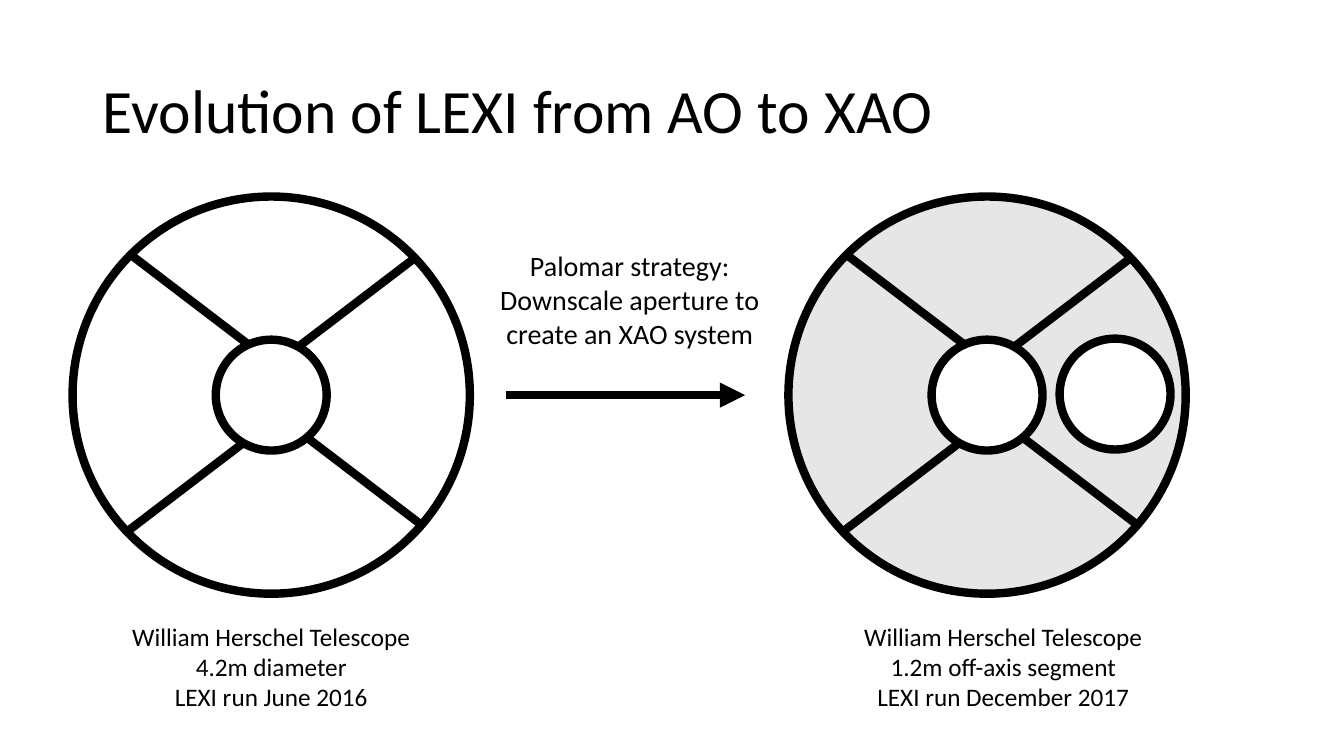
from lxml import etree
from pptx import Presentation
from pptx.dml.color import RGBColor
from pptx.enum.shapes import MSO_CONNECTOR, MSO_SHAPE
from pptx.enum.text import MSO_ANCHOR, PP_ALIGN
from pptx.oxml.ns import qn
from pptx.util import Inches, Pt

STRAIGHT = MSO_CONNECTOR.STRAIGHT
OVAL = MSO_SHAPE.OVAL
TOP, MIDDLE = MSO_ANCHOR.TOP, MSO_ANCHOR.MIDDLE
LEFT, CENTER = PP_ALIGN.LEFT, PP_ALIGN.CENTER

BLACK = RGBColor(0x00, 0x00, 0x00)
WHITE = RGBColor(0xFF, 0xFF, 0xFF)
GREY = RGBColor(0xE7, 0xE6, 0xE6)
FONT = "Calibri"
STROKE = Pt(6)

TITLE = "Evolution of LEXI from AO to XAO"
STRATEGY = ["Palomar strategy:", "Downscale aperture to create an XAO system"]

# Pupil centre x, mirror colour, caption left, caption lines
TELESCOPES = [
    (2.69, WHITE, 1.08,
     ["William Herschel Telescope", "4.2m diameter", "LEXI run June 2016"]),
    (9.79, GREY, 8.34,
     ["William Herschel Telescope", "1.2m off-axis segment", "LEXI run December 2017"]),
]

PUPIL_Y = 3.92
MIRROR_DIAMETER = 3.94
SMALL_DIAMETER = 1.1
SEGMENT_CENTER = (11.06, 3.91)
# Spider vanes as (outer, inner) offsets from the pupil centre
VANES = [
    ((-1.39, -1.39), (-0.21, -0.49)),
    ((1.45, -1.38), (0.27, -0.48)),
    ((-1.45, 1.37), (-0.27, 0.47)),
    ((1.52, 1.31), (0.34, 0.41)),
]
ARROW_START, ARROW_END = (5.02, PUPIL_Y), (7.39, PUPIL_Y)


def add_text(slide, box, lines, size, align=CENTER, anchor=TOP, spacing=1.0):
    frame = slide.shapes.add_textbox(*map(Inches, box)).text_frame
    frame.word_wrap = True
    frame.vertical_anchor = anchor
    frame.text = "\n".join(lines)
    for paragraph in frame.paragraphs:
        paragraph.alignment = align
        paragraph.line_spacing = spacing
        for run in paragraph.runs:
            run.font.name = FONT
            run.font.size = Pt(size)
            run.font.color.rgb = BLACK


def add_circle(shapes, center, diameter, color):
    x, y = center
    circle = shapes.add_shape(OVAL, Inches(x - diameter / 2), Inches(y - diameter / 2),
                              Inches(diameter), Inches(diameter))
    circle.shadow.inherit = False
    circle.fill.solid()
    circle.fill.fore_color.rgb = color
    circle.line.color.rgb = BLACK
    circle.line.width = STROKE


def add_line(shapes, start, end):
    line = shapes.add_connector(STRAIGHT, *map(Inches, start + end))
    line.line.color.rgb = BLACK
    line.line.width = STROKE
    etree.SubElement(line._element.spPr, qn("a:effectLst"))
    return line


def add_pupil(slide, center_x, color):
    """Group the mirror, its central obscuration and the spider vanes."""
    shapes = slide.shapes.add_group_shape().shapes
    center = (center_x, PUPIL_Y)
    add_circle(shapes, center, MIRROR_DIAMETER, color)
    add_circle(shapes, center, SMALL_DIAMETER, WHITE)
    for vane in VANES:
        outer, inner = [(center_x + dx, PUPIL_Y + dy) for dx, dy in vane]
        add_line(shapes, outer, inner)


def main():
    prs = Presentation()
    prs.slide_width, prs.slide_height = Inches(13.33), Inches(7.5)
    slide = prs.slides.add_slide(prs.slide_layouts[6])

    add_text(slide, (0.92, 0.4, 11.5, 1.45), [TITLE], 44, LEFT, MIDDLE, 0.9)
    for center_x, color, caption_left, caption in TELESCOPES:
        add_pupil(slide, center_x, color)
        add_text(slide, (caption_left, 6.11, 3.22, 1.01), caption, 18)

    arrow = add_line(slide.shapes, ARROW_START, ARROW_END)
    etree.SubElement(arrow.line._get_or_add_ln(), qn("a:tailEnd"), type="triangle")
    add_text(slide, (4.85, 2.42, 2.79, 1.11), STRATEGY, 20)
    add_circle(slide.shapes, SEGMENT_CENTER, SMALL_DIAMETER, WHITE)

    prs.save("out.pptx")


if __name__ == "__main__":
    main()
